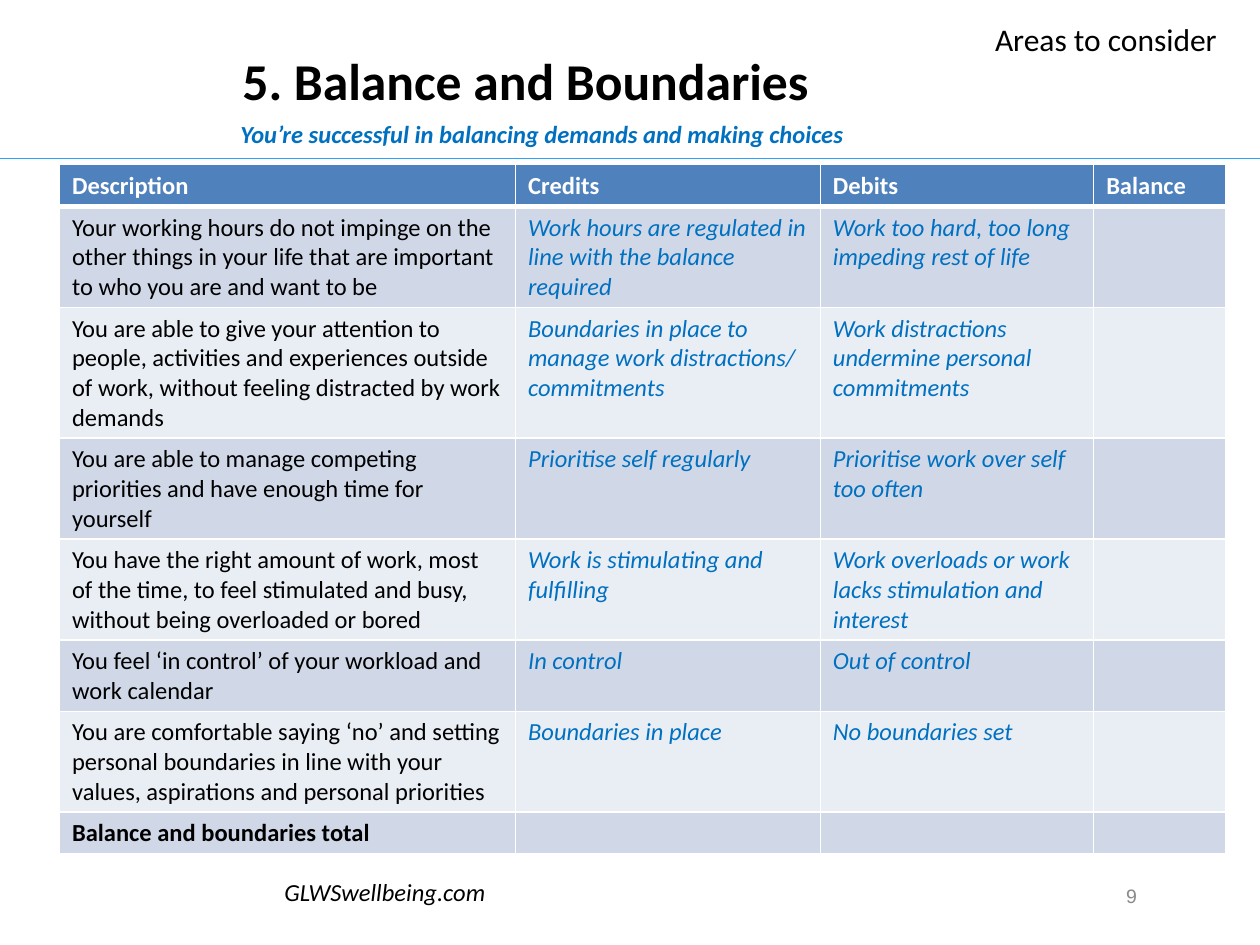
from lxml.etree import SubElement
from pptx import Presentation
from pptx.dml.color import RGBColor
from pptx.enum.shapes import MSO_CONNECTOR
from pptx.enum.text import MSO_ANCHOR, MSO_AUTO_SIZE, PP_ALIGN
from pptx.oxml.ns import qn
from pptx.util import Pt

BLACK, BLUE, WHITE = "000000", "0070C0", "FFFFFF"
HEADS = ["Description", "Credits", "Debits", "Balance"]
WIDTHS = [260.6, 174.2, 156.2, 75.6]
ROWS = [
    (3, "Your working hours do not impinge on the other things in your life that are important to who you are and want to be",
     "Work hours are regulated in line with the balance required",
     "Work too hard, too long impeding rest of life"),
    (4, "You are able to give your attention to people, activities and experiences outside of work, without feeling distracted by work demands",
     "Boundaries in place to manage work distractions/ commitments",
     "Work distractions undermine personal commitments"),
    (3, "You are able to manage competing priorities and have enough time for yourself",
     "Prioritise self regularly",
     "Prioritise work over self too often"),
    (3, "You have the right amount of work, most of the time, to feel stimulated and busy, without being overloaded or bored",
     "Work is stimulating and fulfilling",
     "Work overloads or work lacks stimulation and interest"),
    (2, "You feel ‘in control’ of your workload and work calendar",
     "In control", "Out of control"),
    (3, "You are comfortable saying ‘no’ and setting personal boundaries in line with your values, aspirations and personal priorities",
     "Boundaries in place", "No boundaries set"),
    (1, "Balance and boundaries total", "", ""),
]


def tint(code):
    """Return the colour for a hex string."""
    return RGBColor.from_string(code)


def write(para, text, size=14, color=BLACK, bold=False, italic=False, face="Calibri"):
    """Add one formatted run to a paragraph."""
    run = para.add_run()
    run.text = text
    font = run.font
    font.name, font.size, font.bold, font.italic = face, Pt(size), bold, italic
    font.color.rgb = tint(color)


def label(slide, box, text, align=PP_ALIGN.LEFT, wrap=True,
          anchor=MSO_ANCHOR.TOP, space=None, **style):
    """Place a text box holding one line."""
    frame = slide.shapes.add_textbox(*map(Pt, box)).text_frame
    frame.word_wrap, frame.vertical_anchor = wrap, anchor
    para = frame.paragraphs[0]
    para.alignment, para.line_spacing = align, space
    write(para, text, **style)


def header(slide, box):
    """Place the title, its rule, the subtitle and the corner note."""
    left, top, width, height = box
    title = slide.shapes.title
    title.left, title.top, title.width, title.height = map(Pt, box)
    frame = title.text_frame
    frame.auto_size = MSO_AUTO_SIZE.NONE
    frame.vertical_anchor = MSO_ANCHOR.MIDDLE
    frame.margin_left = Pt(138.5)
    para = frame.paragraphs[0]
    para.alignment = PP_ALIGN.LEFT
    write(para, "5. Balance and Boundaries", 29.5, bold=True)
    base = Pt(top + height)
    rule = slide.shapes.add_connector(
        MSO_CONNECTOR.STRAIGHT, Pt(left), base, Pt(left + width), base)
    rule.line.color.rgb = tint("28A4FF")
    rule.line.width = Pt(0.75)
    SubElement(rule._element.spPr, qn("a:effectLst"))
    label(slide, (left + 130.3, top + 55.5, 580, 30),
          "You’re successful in balancing demands and making choices",
          space=1.5, color=BLUE, bold=True, italic=True)
    label(slide, (left + 561.5, top + 7.2, 142.6, 28.8), "Areas to consider",
          wrap=False, size=18)


def edge(cell, low):
    """Draw white borders round a cell, with the given bottom width."""
    props = cell._tc.get_or_add_tcPr()
    for side, width in (("L", 1), ("R", 1), ("T", 1), ("B", low)):
        line = SubElement(props, qn("a:ln" + side), w=str(Pt(width)))
        fill = SubElement(line, qn("a:solidFill"))
        SubElement(fill, qn("a:srgbClr"), val=WHITE)


def paint(cell, text, fill, low=1, **style):
    """Fill, border and write one cell."""
    edge(cell, low)
    cell.fill.solid()
    cell.fill.fore_color.rgb = tint(fill)
    para = cell.text_frame.paragraphs[0]
    if text:
        write(para, text, **style)
    else:
        SubElement(para._p, qn("a:endParaRPr"), sz="1400")


def ledger(slide, box):
    """Place the table of credits and debits."""
    grid = slide.shapes.add_table(len(ROWS) + 1, len(HEADS), *map(Pt, box)).table
    for col, width in zip(grid.columns, WIDTHS):
        col.width = Pt(width)
    for row, lines in zip(grid.rows, [1] + [item[0] for item in ROWS]):
        row.height = Pt(6.6 + 17 * lines)
    for col, text in enumerate(HEADS):
        paint(grid.cell(0, col), text, "4F81BD", 3 , color=WHITE, bold=True)
    for num, (_, lead, *notes) in enumerate(ROWS, 1):
        fill = "D0D8E8" if num % 2 else "E9EDF4"
        paint(grid.cell(num, 0), lead, fill, bold=num == len(ROWS))
        for col, text in enumerate([*notes, ""], 1):
            paint(grid.cell(num, col), text, fill, color=BLUE, italic=True)


def footer(slide, box):
    """Place the web address and the page number."""
    left, top, width, height = box
    label(slide, (left, top, 130.3, 24.5), "GLWSwellbeing.com",
          PP_ALIGN.CENTER, wrap=False, italic=True)
    label(slide, (left + width - 74.9, top, 74.9, height), "9", PP_ALIGN.CENTER,
          anchor=MSO_ANCHOR.MIDDLE, size=11.1, color="898989", face="Arial")


def main():
    """Build and save the slide."""
    deck = Presentation()
    deck.slide_width, deck.slide_height = Pt(720), Pt(540)
    slide = deck.slides.add_slide(deck.slide_layouts[5])
    header(slide, (0, 0.7, 720, 90))
    ledger(slide, (34, 94, sum(WIDTHS), 393))
    footer(slide, (154.8, 497.5, 529.2, 28.8))
    deck.save("out.pptx")


if __name__ == "__main__":
    main()
